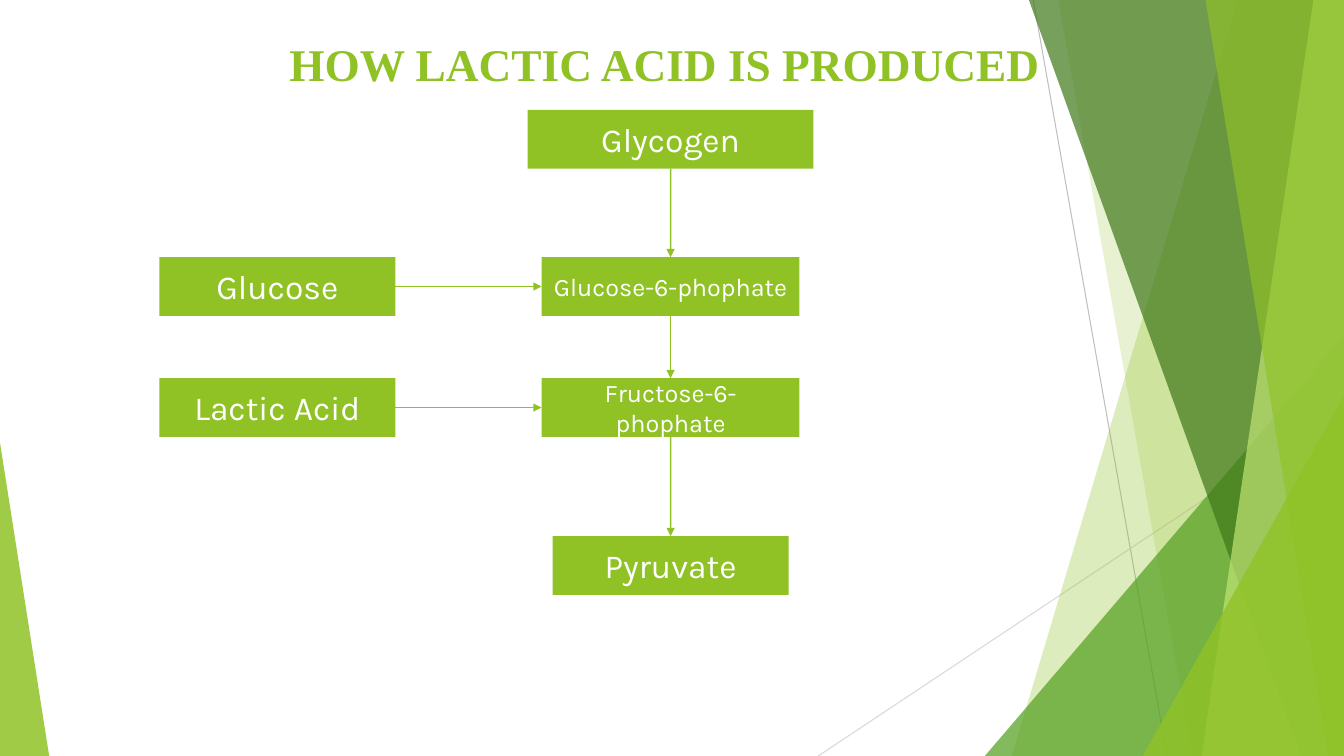
"""Build a slide that shows how lactic acid is produced."""
from lxml.etree import SubElement
from pptx import Presentation
from pptx.dml.color import RGBColor
from pptx.enum.shapes import MSO_CONNECTOR, MSO_SHAPE
from pptx.enum.text import MSO_ANCHOR, PP_ALIGN
from pptx.oxml.ns import qn
from pptx.util import Cm, Pt

WIDTH, HEIGHT = 33.87, 19.05
GREEN = "90C226"


def paint(color_format, color, opacity=100):
    color_format.rgb = RGBColor.from_string(color)
    if opacity < 100:
        parent = color_format._xFill if hasattr(color_format, "_xFill") else None
        for element in parent.iter(qn("a:srgbClr")):
            SubElement(element, qn("a:alpha"), val=str(opacity * 1000))


def write(shape, text, size=24, font="Karla", color="FFFFFF", bold=False):
    frame = shape.text_frame
    frame.word_wrap = True
    frame.vertical_anchor = MSO_ANCHOR.MIDDLE
    paragraph = frame.paragraphs[0]
    paragraph.alignment = PP_ALIGN.CENTER
    run = paragraph.add_run()
    run.text = text
    run.font.size = Pt(size)
    run.font.name = font
    run.font.bold = bold
    paint(run.font.color, color)


presentation = Presentation()
presentation.slide_width = Cm(WIDTH)
presentation.slide_height = Cm(HEIGHT)
slide = presentation.slides.add_slide(presentation.slide_layouts[5])
shapes = slide.shapes

title = shapes.title
title.left, title.top, title.width, title.height = Cm(2.14), Cm(0.81), Cm(29.21), Cm(1.57)
write(title, "HOW LACTIC ACID IS PRODUCED", size=32.4, font="Times New Roman", color=GREEN, bold=True)

thin_lines = [
    (26.04, 0, 29.41, HEIGHT, "BFBFBF"),
    (WIDTH, 10.24, 20.62, HEIGHT, "D9D9D9"),
]
for x1, y1, x2, y2, color in thin_lines:
    thin_line = shapes.add_connector(MSO_CONNECTOR.STRAIGHT, Cm(x1), Cm(y1), Cm(x2), Cm(y2))
    thin_line.line.width = Pt(0.75)
    paint(thin_line.line.color, color)
    SubElement(thin_line._element.spPr, qn("a:effectLst"))

facets = [
    ("band", 31.19, 25.5, GREEN, 30),
    ("band", 26.67, 30.05, GREEN, 20),
    ("triangle", 24.82, 8.46, 9.05, 1, "54A021", 72),
    ("band", 25.93, 32.79, "3F7819", 70),
    ("band", 33.1, 30.28, "C0E474", 70),
    ("band", 30.38, 33.48, GREEN, 65),
    ("triangle", 28.8, 9.98, 5.07, 1, GREEN, 80),
    ("triangle", 0, 11.15, 1.24, 0, GREEN, 85),
]
for kind, *numbers, color, opacity in facets:
    if kind == "band":
        top_x, bottom_x = numbers
        builder = shapes.build_freeform(Cm(top_x), 0)
        corners = [(WIDTH, 0), (WIDTH, HEIGHT), (bottom_x, HEIGHT)]
        builder.add_line_segments([(Cm(x), Cm(y)) for x, y in corners], close=True)
        facet = builder.convert_to_shape()
    else:
        left, top, width, apex = numbers
        facet = shapes.add_shape(
            MSO_SHAPE.ISOSCELES_TRIANGLE, Cm(left), Cm(top), Cm(width), Cm(HEIGHT - top))
        facet.adjustments[0] = apex
    facet.shadow.inherit = False
    facet.line.fill.background()
    facet.fill.solid()
    paint(facet.fill.fore_color, color, opacity)

side_x, main_x = 6.99, 16.9
steps = [
    ("Glycogen", main_x, 2.77, 7.2, 24),
    ("Glucose-6-phophate", main_x, 6.48, 6.5, 18),
    ("Glucose", side_x, 6.48, 5.95, 24),
    ("Fructose-6-phophate", main_x, 9.53, 6.5, 18),
    ("Lactic Acid", side_x, 9.53, 5.95, 24),
    ("Pyruvate", main_x, 13.51, 5.95, 24),
]
boxes = {}
for name, center, top, width, size in steps:
    box = shapes.add_shape(
        MSO_SHAPE.RECTANGLE, Cm(center - width / 2), Cm(top), Cm(width), Cm(1.48))
    box.shadow.inherit = False
    box.line.fill.background()
    box.fill.solid()
    paint(box.fill.fore_color, GREEN)
    write(box, name, size=size)
    boxes[name] = box

TOP, LEFT, BOTTOM, RIGHT = range(4)
arrows = [
    ("Glycogen", BOTTOM, "Glucose-6-phophate", TOP),
    ("Glucose", RIGHT, "Glucose-6-phophate", LEFT),
    ("Glucose-6-phophate", BOTTOM, "Fructose-6-phophate", TOP),
    ("Lactic Acid", RIGHT, "Fructose-6-phophate", LEFT),
    ("Fructose-6-phophate", BOTTOM, "Pyruvate", TOP),
]
for source, source_side, target, target_side in arrows:
    arrow = shapes.add_connector(MSO_CONNECTOR.STRAIGHT, 0, 0, 0, 0)
    arrow.begin_connect(boxes[source], source_side)
    arrow.end_connect(boxes[target], target_side)
    arrow.line.width = Pt(1)
    paint(arrow.line.color, GREEN)
    SubElement(arrow.line._get_or_add_ln(), qn("a:tailEnd"), type="triangle")
    SubElement(arrow._element.spPr, qn("a:effectLst"))

presentation.save("out.pptx")
